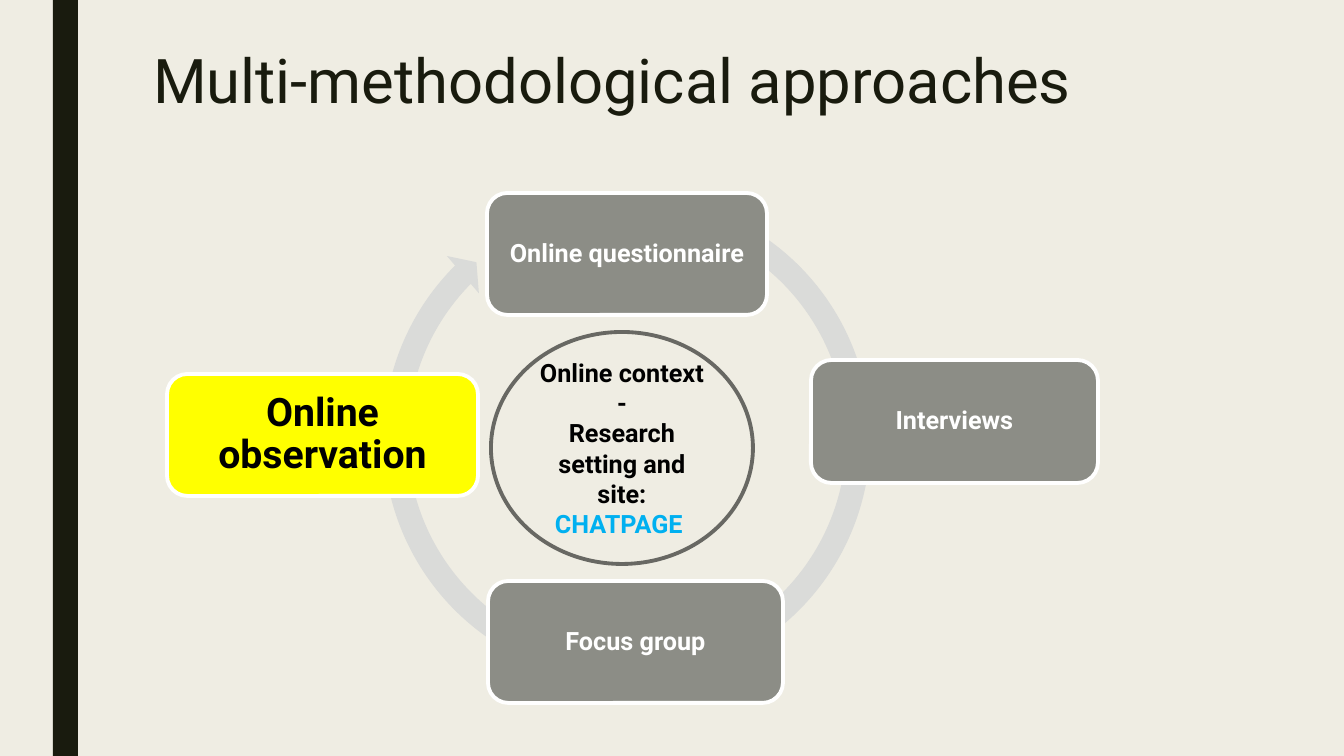
import pptx
import pptx.util
import pptx.dml.color
import pptx.enum.shapes
import pptx.enum.text

PX = 914400 / 100.8
FONT = "Roboto"
HUES = {
    "back": "EFEDE3", "dark": "191B0E", "ring": "DADBD9", "edge": "686863",
    "box": "8C8D86", "white": "FFFFFF", "mark": "FFFF00", "black": "000000",
    "blue": "00B0F0",
}
KINDS = pptx.enum.shapes.MSO_SHAPE
ALIGN = pptx.enum.text.PP_ALIGN
ANCHOR = pptx.enum.text.MSO_ANCHOR


def px(size):
    """Turn whole px into EMU."""
    return pptx.util.Emu(round(size * PX))


def hue(name):
    """Look up a colour by name."""
    return pptx.dml.color.RGBColor.from_string(HUES[name])


def apply(item, form):
    """Set the attributes given in a dict."""
    for key, value in form.items():
        setattr(item, key, value)


def add_run(para, text, size, color, bold=True):
    """Add one formatted run to a paragraph."""
    run = para.add_run()
    run.text = text
    apply(run.font, {"name": FONT, "size": pptx.util.Pt(size), "bold": bold})
    run.font.color.rgb = hue(color)


def add_form(slide, kind, box, fill=None, line=None):
    """Add a preset shape with plain fill and line."""
    form = slide.shapes.add_shape(kind, *map(px, box))
    form.shadow.inherit = False
    if fill:
        form.fill.solid()
        form.fill.fore_color.rgb = hue(fill)
    else:
        form.fill.background()
    if line:
        form.line.color.rgb = hue(line)
        form.line.width = pptx.util.Pt(2.75)
    else:
        form.line.fill.background()
    return form


def add_title(slide, box, text):
    """Place the slide title."""
    title = slide.shapes.title
    apply(title, dict(zip(("left", "top", "width", "height"), map(px, box))))
    frame = title.text_frame
    apply(frame, {"vertical_anchor": ANCHOR.TOP, "word_wrap": True})
    para = frame.paragraphs[0]
    apply(para, {"alignment": ALIGN.LEFT, "line_spacing": 0.89})
    add_run(para, text, 44, "dark", False)


def add_step(slide, box, text, fill="box", color="white", size=18, inset=7):
    """Add one rounded step of the cycle."""
    form = add_form(slide, KINDS.ROUNDED_RECTANGLE, box, fill, "white")
    frame = form.text_frame
    sides = ("margin_left", "margin_top", "margin_right", "margin_bottom")
    apply(frame, dict.fromkeys(sides, px(inset)))
    apply(frame, {"vertical_anchor": ANCHOR.MIDDLE, "word_wrap": True})
    para = frame.paragraphs[0]
    apply(para, {"alignment": ALIGN.CENTER, "line_spacing": 0.9})
    add_run(para, text, size, color)


def add_core(slide, box):
    """Add the oval that names the setting."""
    frame = add_form(slide, KINDS.OVAL, box, line="edge").text_frame
    apply(frame, {"vertical_anchor": ANCHOR.MIDDLE, "word_wrap": True})
    first, last = frame.paragraphs[0], frame.add_paragraph()
    for para in (first, last):
        para.alignment = ALIGN.CENTER
    add_run(first, "Online context -", 18, "black")
    add_run(last, "Research setting and site: ", 18, "black")
    add_run(last, "CHATPAGE ", 18, "blue")


def add_cycle(slide, box):
    """Place the ring, the oval and the four steps."""
    left, top, width, height = box
    ring = add_form(slide, KINDS.CIRCULAR_ARROW,
                    (left + 204, top - 11, 512, 512), "ring")
    for spot, value in enumerate((0.047, 2.729, 134.921, 175.976, 0.048)):
        ring.adjustments[spot] = value
    add_core(slide, (left + 324, top + 139, 262, 232))
    add_step(slide, (left + 320, top, 280, 122), "Online questionnaire")
    add_step(slide, (left + width - 287, top + 167, 287, 123), "Interviews")
    add_step(slide, (left + 321, top + height - 122, 295, 122), "Focus group")
    add_step(slide, (left, top + 181, 311, 122), "Online observation",
             "mark", "black", 28, 12)


def main():
    """Build and save the slide."""
    deck = pptx.Presentation()
    apply(deck, {"slide_width": px(1344), "slide_height": px(756)})
    slide = deck.slides.add_slide(deck.slide_layouts[5])
    slide.background.fill.solid()
    slide.background.fill.fore_color.rgb = hue("back")
    add_form(slide, KINDS.RECTANGLE, (53, 0, 25, 756), "dark")
    add_title(slide, (143, 46, 1058, 163), "Multi-methodological approaches")
    add_cycle(slide, (167, 193, 931, 510))
    deck.save("out.pptx")


if __name__ == "__main__":
    main()
